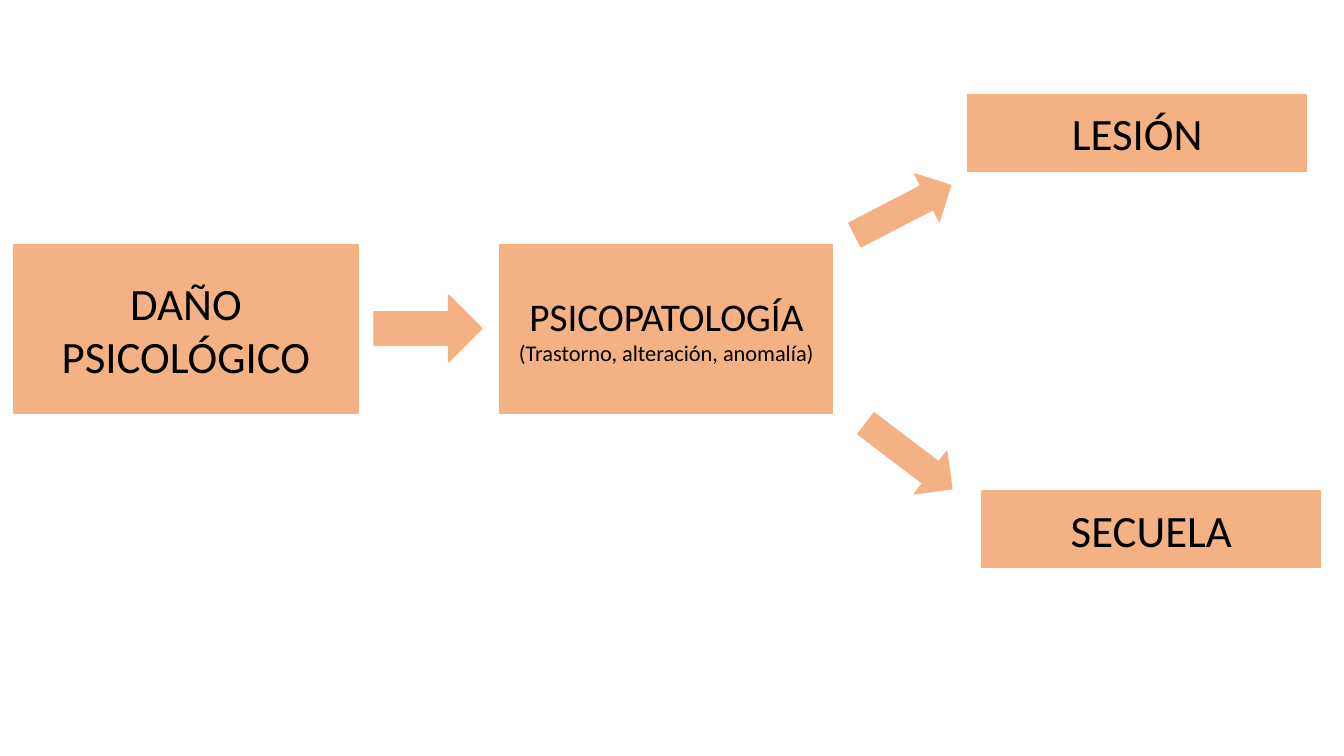
from pptx import Presentation
from pptx.dml.color import RGBColor
from pptx.enum import shapes, text
from pptx.util import Inches, Pt

ORANGE = RGBColor(0xF4, 0xB1, 0x83)
BLACK = RGBColor(0, 0, 0)

prs = Presentation()
prs.slide_width, prs.slide_height = Inches(13.33), Inches(7.5)
s = prs.slides.add_slide(prs.slide_layouts[6])


def add_orange(kind, box):
    sp = s.shapes.add_shape(kind, *[Inches(v) for v in box])
    sp.shadow.inherit = False
    sp.fill.solid()
    sp.fill.fore_color.rgb = ORANGE
    sp.line.color.rgb = ORANGE
    sp.line.width = Pt(1)
    return sp


# Concept boxes: position and (text, size) of each paragraph
concepts = [
    ((0.14, 2.43, 3.41, 1.67), [("DAÑO", 32), ("PSICOLÓGICO", 32)]),
    ((4.96, 2.43, 3.3, 1.67), [("PSICOPATOLOGÍA", 28),
                               ("(Trastorno, alteración, anomalía)", 16)]),
    ((9.6, 0.94, 3.36, 0.76), [("LESIÓN", 32)]),
    ((9.74, 4.87, 3.36, 0.76), [("SECUELA", 32)]),
]
for box, lines in concepts:
    tf = add_orange(shapes.MSO_SHAPE.RECTANGLE, box).text_frame
    tf.word_wrap = True
    tf.vertical_anchor = text.MSO_ANCHOR.MIDDLE
    for i, (words, size) in enumerate(lines):
        p = tf.add_paragraph() if i else tf.paragraphs[0]
        p.alignment = text.PP_ALIGN.CENTER
        r = p.add_run()
        r.text = words
        r.font.color.rgb = BLACK
        for name, value in {"name": "Calibri", "size": Pt(size)}.items():
            setattr(r.font, name, value)

# Arrows between the concepts: position and rotation
arrows = [
    ((3.71, 2.93, 1.07, 0.66), 0),
    ((8.42, 1.82, 1.07, 0.53), 332.6),
    ((8.48, 4.26, 1.07, 0.53), 37.2),
]
for box, angle in arrows:
    add_orange(shapes.MSO_SHAPE.RIGHT_ARROW, box).rotation = angle

prs.save("out.pptx")
